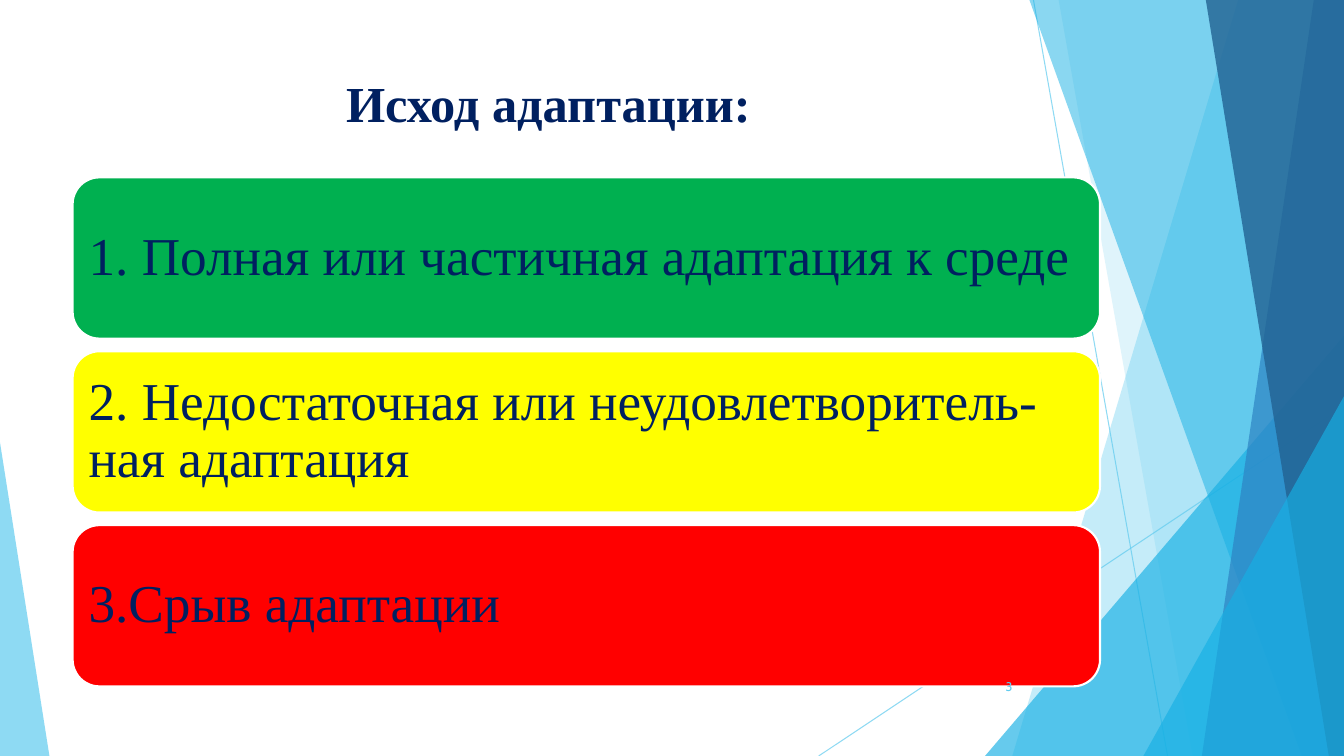
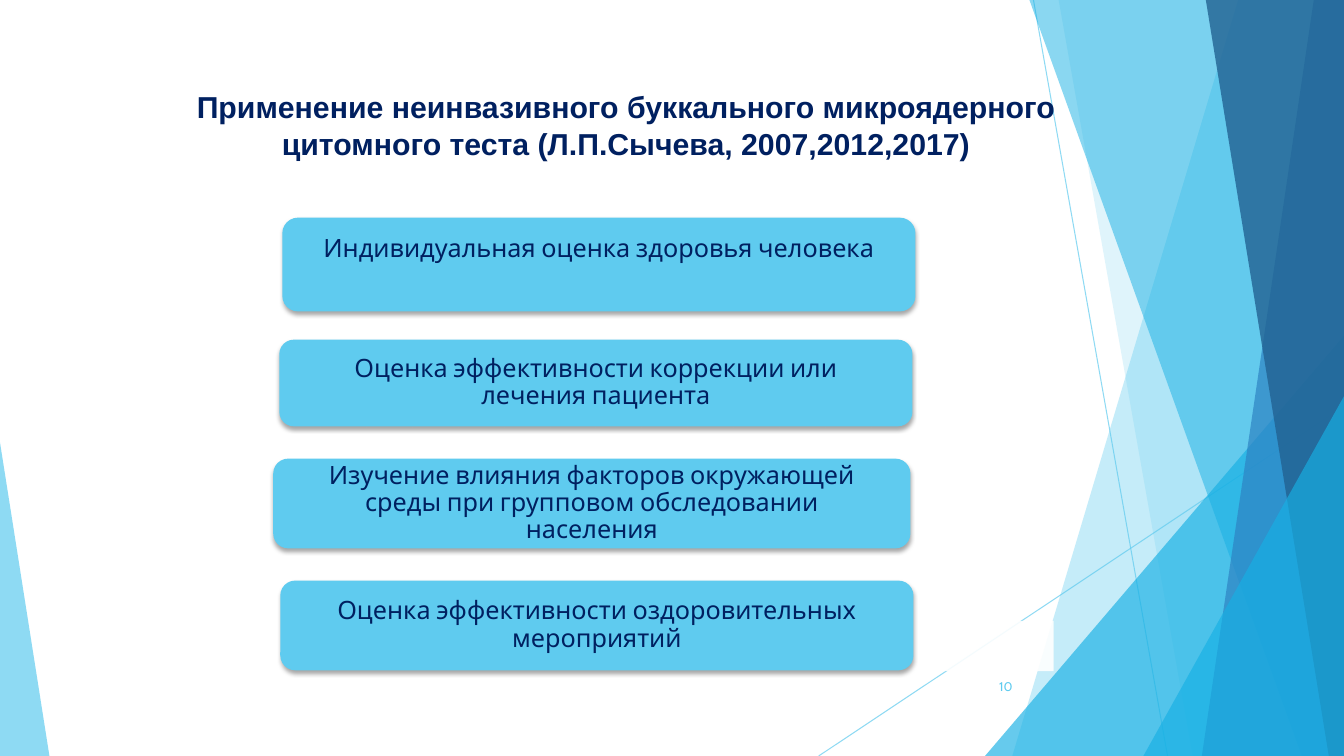
from lxml.etree import SubElement
from pptx import Presentation
from pptx.dml.color import RGBColor
from pptx.enum.shapes import MSO_CONNECTOR, MSO_SHAPE
from pptx.enum.text import MSO_ANCHOR, PP_ALIGN
from pptx.oxml.ns import qn
from pptx.util import Inches, Pt

WIDTH, HEIGHT = 13.33, 7.5
NAVY, SKY, AZURE, BLUE, DEEP, WHITE = "002060", "5FCBEF", "17B0E4", "2E83C3", "226292", "FFFFFF"

RAYS = [((10.25, 0), (11.58, 7.5)), ((13.33, 4.03), (8.12, 7.5))]
BACKDROP = [
    ("band", (12.28, 10.04), SKY, 36),
    ("band", (10.5, 11.83), SKY, 20),
    ("triangle", (9.77, 3.33, 3.56, 4.17, 1), AZURE, 66),
    ("band", (10.21, 12.91), AZURE, 50),
    ("band", (13.03, 11.92), BLUE, 70),
    ("band", (11.96, 13.18), DEEP, 80),
    ("triangle", (11.34, 3.93, 1.99, 3.57, 1), AZURE, 66),
    ("triangle", (0, 4.39, 0.49, 3.11, 0), SKY, 70),
]

OUTCOMES = [
    ("1. Полная или частичная адаптация к среде", "00B050"),
    ("2. Недостаточная или неудовлетворитель-ная адаптация", "FFFF00"),
    ("3.Срыв адаптации", "FF0000"),
]
OUTCOME_TOP, OUTCOME_STEP = 1.76, 1.725

USES = [
    ("Индивидуальная оценка здоровья человека", (2.8, 2.16, 6.28, 0.93), (2.58, 0.54), 0.3),
    ("Оценка эффективности коррекции или лечения пациента", (2.77, 3.37, 6.28, 0.86), (3.74, 0.5), 0),
    ("Изучение влияния факторов окружающей среды при групповом обследовании населения",
     (2.71, 4.55, 6.32, 0.89), (4.99, 0.5), 0),
    ("Оценка эффективности оздоровительных мероприятий", (2.78, 5.76, 6.28, 0.89), (6.16, 0.5), 0),
]


def rgb(color):
    return RGBColor.from_string(color)


def fade(shape, opacity):
    for color in shape.element.spPr.iter(qn("a:srgbClr")):
        SubElement(color, qn("a:alpha")).set("val", str(opacity * 1000))


def paint(shape, color, opacity=100, outline=None):
    shape.shadow.inherit = False
    shape.fill.solid()
    shape.fill.fore_color.rgb = rgb(color)
    if outline:
        shape.line.color.rgb = rgb(outline)
        shape.line.width = Pt(1.5)
    else:
        shape.line.fill.background()
    if opacity < 100:
        fade(shape, opacity)
    return shape


def add_box(page, kind, area, color, **look):
    box = page.shapes.add_shape(kind, *map(Inches, area))
    return paint(box, color, **look)


def drop_shadow(shape):
    effects = shape.element.spPr.find(qn("a:effectLst"))
    shadow = SubElement(effects, qn("a:outerShdw"))
    for name, value in (("blurRad", Pt(3)), ("dist", Pt(2)), ("dir", 5400000), ("rotWithShape", 0)):
        shadow.set(name, str(int(value)))
    color = SubElement(shadow, qn("a:srgbClr"))
    color.set("val", "000000")
    SubElement(color, qn("a:alpha")).set("val", "35000")


def write(box, text, size, font, color=NAVY, bold=False, align=PP_ALIGN.CENTER,
          anchor=MSO_ANCHOR.MIDDLE, spacing=None, insets=(0.1, 0.05, 0.1, 0.05)):
    frame = box.text_frame
    frame.word_wrap = True
    frame.vertical_anchor = anchor
    frame.margin_left, frame.margin_top, frame.margin_right, frame.margin_bottom = map(Inches, insets)
    para = frame.paragraphs[0]
    para.alignment = align
    para.line_spacing = spacing
    span = para.add_run()
    span.text = text
    span.font.size = Pt(size)
    span.font.name = font
    span.font.bold = bold
    span.font.color.rgb = rgb(color)


def add_text(page, area, text, **style):
    write(page.shapes.add_textbox(*map(Inches, area)), text, **style)


def add_backdrop(page):
    for start, end in RAYS:
        ray = page.shapes.add_connector(MSO_CONNECTOR.STRAIGHT, *map(Inches, start + end))
        ray.line.color.rgb = rgb(SKY)
        ray.line.width = Pt(0.75)
        fade(ray, 70)
        SubElement(ray.element.spPr, qn("a:effectLst"))
    for kind, place, color, opacity in BACKDROP:
        if kind == "triangle":
            *area, apex = place
            shape = add_box(page, MSO_SHAPE.ISOSCELES_TRIANGLE, area, color, opacity=opacity)
            shape.adjustments[0] = apex
        else:
            top_left, bottom_left = place
            corners = [(WIDTH, 0), (WIDTH, HEIGHT), (bottom_left, HEIGHT)]
            outline = page.shapes.build_freeform(Inches(top_left), 0)
            outline.add_line_segments([(Inches(x), Inches(y)) for x, y in corners])
            paint(outline.convert_to_shape(), color, opacity)


def add_page(deck, title, title_area, size, font):
    page = deck.slides.add_slide(deck.slide_layouts[6])
    add_backdrop(page)
    add_text(page, title_area, title, size=size, font=font, bold=True, anchor=MSO_ANCHOR.TOP)
    return page


def add_number(page, number):
    add_text(page, (9.39, 6.61, 0.75, 0.4), number, size=9, font="Cabin", color=SKY, align=PP_ALIGN.RIGHT)


def add_outcomes(deck):
    page = add_page(deck, "Исход адаптации:", (0.74, 0.67, 9.4, 1.44), 36, "Times New Roman")
    for index, (text, color) in enumerate(OUTCOMES):
        area = (0.72, OUTCOME_TOP + index * OUTCOME_STEP, 10.19, 1.6)
        box = add_box(page, MSO_SHAPE.ROUNDED_RECTANGLE, area, color, outline=WHITE)
        write(box, text, 38, "Times New Roman", align=PP_ALIGN.LEFT, spacing=0.9, insets=(0.08,) * 4)
    add_number(page, "3")


def add_uses(deck):
    title = "Применение неинвазивного буккального микроядерного цитомного теста (Л.П.Сычева, 2007,2012,2017)"
    page = add_page(deck, title, (1.51, 0.83, 9.4, 0.98), 21.6, "Arial")
    for text, area, (strip_top, strip_height), lift in USES:
        add_box(page, MSO_SHAPE.RECTANGLE, (1.56, strip_top, 8.89, strip_height), WHITE, opacity=90)
        box = add_box(page, MSO_SHAPE.ROUNDED_RECTANGLE, area, SKY)
        drop_shadow(box)
        write(box, text, 18, "Cabin", spacing=0.9, insets=(0.2, 0, 0.2, lift))
    add_number(page, "10")


def main():
    deck = Presentation()
    deck.slide_width, deck.slide_height = Inches(WIDTH), Inches(HEIGHT)
    add_outcomes(deck)
    add_uses(deck)
    deck.save("out.pptx")


if __name__ == "__main__":
    main()
